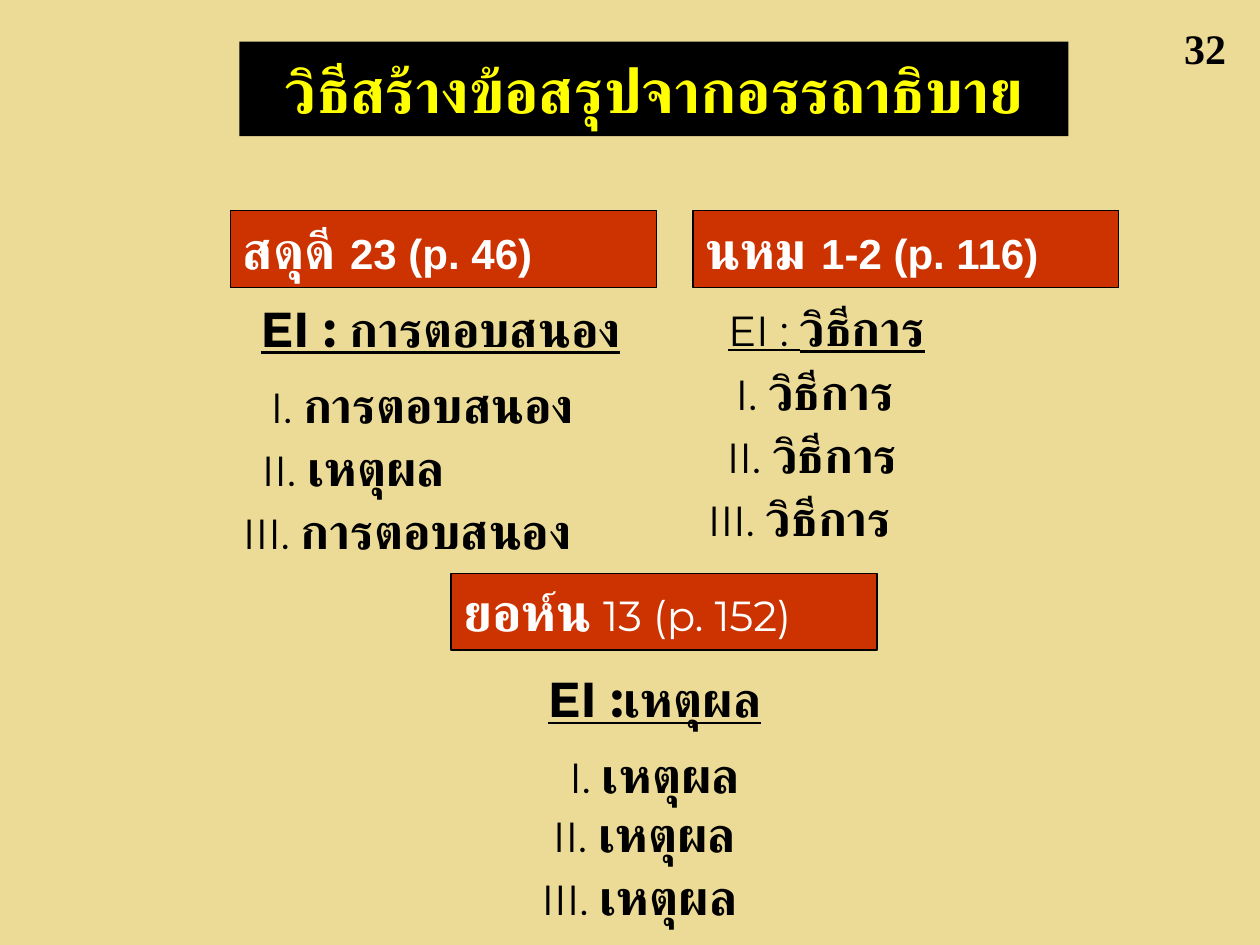
import pptx
import pptx.dml.color
import pptx.enum.shapes
import pptx.enum.text
import pptx.oxml
import pptx.oxml.ns
import pptx.util

COLORS = {
    "background": "ECDB96",
    "black": "000000",
    "title": "FFFF00",
    "header": "CC3300",
    "white": "FFFFFF",
}
COLUMNS, ROWS = 100, 75
SLIDE_WIDTH, SLIDE_HEIGHT = pptx.util.Inches(10), pptx.util.Inches(7.5)
HEADER_WIDTH, HEADER_HEIGHT, LINE_HEIGHT = 33.8, 6.1, 5.7
BODY_FONT, HEADER_FONT = "Montserrat", "Arial"
NUMERALS = ("I. ", "II. ", "III. ")

# Header and heading runs: (text, size, bold, font).
# Heading and point places: (column, row, width).
SECTIONS = [
    {
        "header_at": (18.3, 16.7),
        "header": [("สดุดี ", 30, True, HEADER_FONT), ("23 (p. 46)", 24, True, HEADER_FONT)],
        "heading_at": (19.7, 23.2, 33.4),
        "heading": [("EI : การตอบสนอง", 28, True, BODY_FONT)],
        "points": ["การตอบสนอง", "เหตุผล", "การตอบสนอง"],
        "points_at": [(20.5, 29.2, 28.6), (19.8, 34.2, 18.4), (18.3, 39.2, 31.3)],
    },
    {
        "header_at": (55, 16.7),
        "header": [("นหม ", 30, True, HEADER_FONT), ("1-2 (p. 116)", 24, True, HEADER_FONT)],
        "heading_at": (56.8, 23.1, 20),
        "heading": [("EI : ", 24, False, BODY_FONT), ("วิธีการ", 28, True, BODY_FONT)],
        "points": ["วิธีการ"] * 3,
        "points_at": [(57.4, 28.2, 16.4), (56.7, 33.2, 17.7), (55.2, 38.2, 19)],
    },
    {
        "header_at": (35.8, 45.5),
        "header": [("ยอห์น", 30, True, HEADER_FONT), (" 13 (p. 152)", 24, False, BODY_FONT)],
        "heading_at": (42.5, 52.6, 20.5),
        "heading": [("EI :เหตุผล", 28, True, BODY_FONT)],
        "points": ["เหตุผล"] * 3,
        "points_at": [(44.2, 58.6, 17.1), (42.9, 63.3, 18.4), (42, 68.3, 19.7)],
    },
]


def color(name):
    return pptx.dml.color.RGBColor.from_string(COLORS[name])


def place(column, row, width, height):
    """Turn grid columns and rows into slide lengths."""
    across, down = SLIDE_WIDTH / COLUMNS, SLIDE_HEIGHT / ROWS
    return (round(column * across), round(row * down),
            round(width * across), round(height * down))


def write_runs(paragraph, runs, color_name, underline=False):
    paragraph.font.color.rgb = color(color_name)
    for text, size, bold, font_name in runs:
        run = paragraph.add_run()
        run.text = text
        run.font.size = pptx.util.Pt(size)
        run.font.bold = bold
        run.font.name = font_name
        run.font.color.rgb = color(color_name)
        if underline:
            run.font.underline = True
        # Thai letters take the complex-script typeface.
        script_font = pptx.oxml.parse_xml(
            f'<a:cs {pptx.oxml.ns.nsdecls("a")} typeface="{font_name}"/>')
        run.font._element.append(script_font)


def add_line(slide, at, runs, underline=False):
    """Add one line of text that does not wrap."""
    column, row, width = at
    frame = slide.shapes.add_textbox(*place(column, row, width, LINE_HEIGHT)).text_frame
    frame.word_wrap = False
    frame.auto_size = pptx.enum.text.MSO_AUTO_SIZE.SHAPE_TO_FIT_TEXT
    write_runs(frame.paragraphs[0], runs, "black", underline)


def add_bar(slide, at, fill, runs, text_color, alignment):
    shape = slide.shapes.add_shape(pptx.enum.shapes.MSO_SHAPE.RECTANGLE, *place(*at))
    shape.shadow.inherit = False
    shape.fill.solid()
    shape.fill.fore_color.rgb = color(fill)
    shape.line.fill.background()
    shape.text_frame.word_wrap = True
    paragraph = shape.text_frame.paragraphs[0]
    paragraph.alignment = alignment
    write_runs(paragraph, runs, text_color)
    return shape


def add_header(slide, at, runs):
    shape = add_bar(slide, (*at, HEADER_WIDTH, HEADER_HEIGHT), "header", runs,
                    "white", pptx.enum.text.PP_ALIGN.LEFT)
    shape.line.color.rgb = color("black")
    shape.line.width = pptx.util.Pt(0.75)
    shape.text_frame.vertical_anchor = pptx.enum.text.MSO_ANCHOR.TOP
    shape.text_frame.auto_size = pptx.enum.text.MSO_AUTO_SIZE.SHAPE_TO_FIT_TEXT


def add_section(slide, section):
    add_header(slide, section["header_at"], section["header"])
    add_line(slide, section["heading_at"], section["heading"], underline=True)
    for numeral, word, at in zip(NUMERALS, section["points"], section["points_at"]):
        add_line(slide, at, [(numeral, 24, False, BODY_FONT), (word, 28, True, BODY_FONT)])


def main():
    presentation = pptx.Presentation()
    presentation.slide_width, presentation.slide_height = SLIDE_WIDTH, SLIDE_HEIGHT
    slide = presentation.slides.add_slide(presentation.slide_layouts[6])
    slide.background.fill.solid()
    slide.background.fill.fore_color.rgb = color("background")

    title = [("วิธีสร้างข้อสรุปจากอรรถาธิบาย", 35, True, HEADER_FONT)]
    add_bar(slide, (19, 3.3, 65.8, 7.5), "black", title, "title",
            pptx.enum.text.PP_ALIGN.CENTER)
    add_line(slide, (93, 1.3, 5.3), [("32", 24, True, "Times New Roman")])
    for section in SECTIONS:
        add_section(slide, section)
    presentation.save("out.pptx")


if __name__ == "__main__":
    main()
